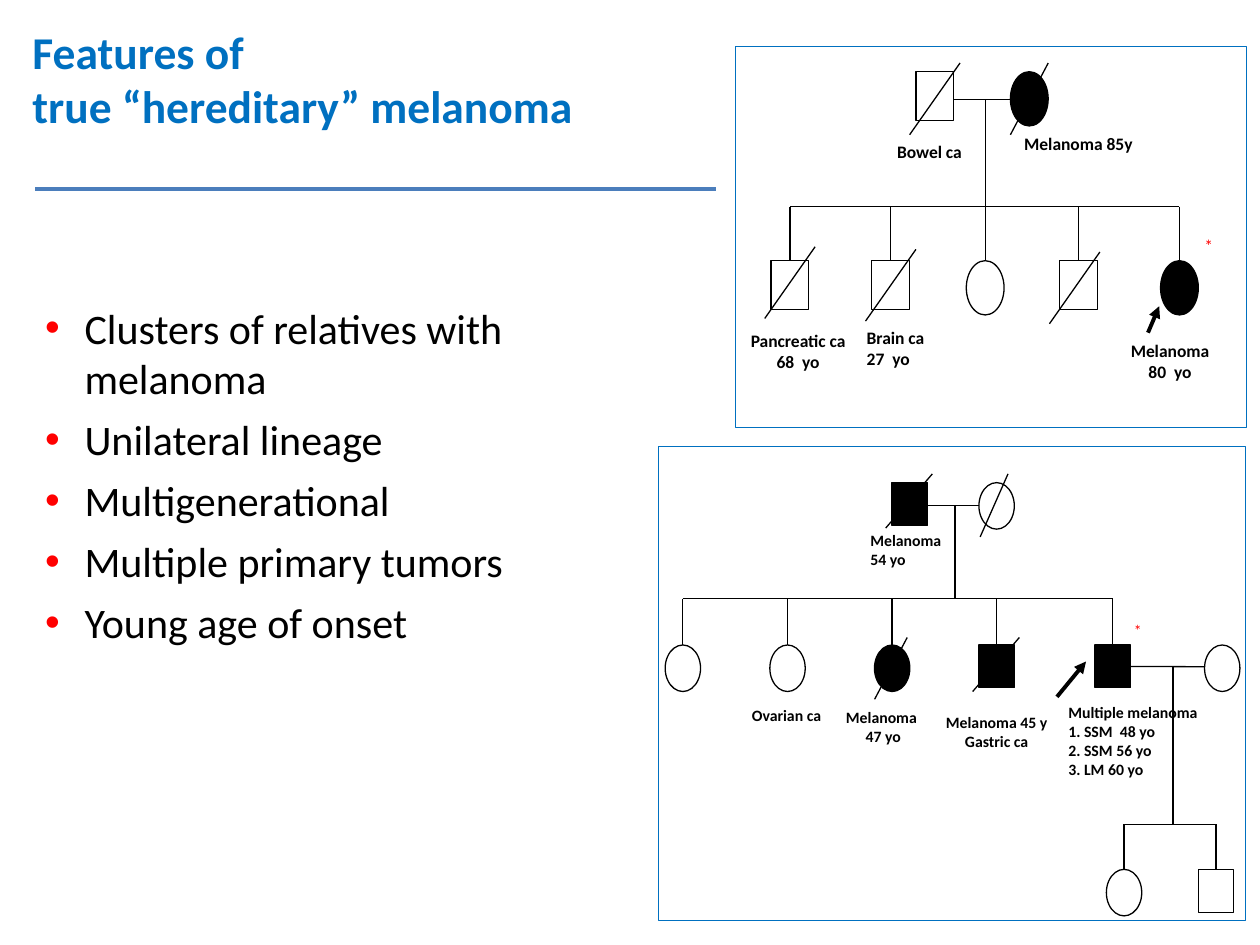
from collections import namedtuple

from lxml.etree import SubElement
from pptx import Presentation
from pptx.dml.color import RGBColor
from pptx.enum.shapes import MSO_CONNECTOR, MSO_SHAPE
from pptx.enum.text import MSO_AUTO_SIZE, PP_ALIGN
from pptx.oxml.ns import qn
from pptx.util import Pt

BLUE, RULE, RED, BLACK, WHITE = "0070C0", "4B7EBC", "FF0000", "000000", "FFFFFF"
LEFT, CENTER, JUSTIFY = PP_ALIGN.LEFT, PP_ALIGN.CENTER, PP_ALIGN.JUSTIFY
MAN, WOMAN = MSO_SHAPE.RECTANGLE, MSO_SHAPE.OVAL

# x is the symbol's centre; slash is (x, y, x, y) measured from its top centre
Person = namedtuple("Person", "sex x ill slash", defaults=(False, None))
# symbol width and the heights of squares and circles
Size = namedtuple("Size", "width man woman")


def color(value):
    return RGBColor.from_string(value)


def add_text(page, left, top, width, height, lines, size=10, ink=BLACK, bold=False,
             align=LEFT, wrap=True, bullet=None, after=None):
    box = page.shapes.add_textbox(Pt(left), Pt(top), Pt(width), Pt(height))
    frame = box.text_frame
    frame.word_wrap = wrap
    frame.auto_size = MSO_AUTO_SIZE.SHAPE_TO_FIT_TEXT
    for index, line in enumerate(lines):
        para = frame.add_paragraph() if index else frame.paragraphs[0]
        para.alignment = align
        if after is not None:
            para.space_after = Pt(after)
        if bullet:
            add_bullet(para, bullet)
        span = para.add_run()
        span.text = line
        span.font.name = "Calibri"
        span.font.size = Pt(size)
        span.font.bold = bold
        span.font.color.rgb = color(ink)
    return box


def add_bullet(para, ink, indent=22.5):
    props = para._p.get_or_add_pPr()
    props.set("marL", str(Pt(indent)))
    props.set("indent", str(-Pt(indent)))
    SubElement(SubElement(props, qn("a:buClr")), qn("a:srgbClr"), val=ink)
    SubElement(props, qn("a:buFont"), typeface="Arial")
    SubElement(props, qn("a:buChar"), char="•")


def add_line(page, x1, y1, x2, y2, ink=BLACK, weight=0.75, arrow=False, begin=None, end=None):
    line = page.shapes.add_connector(MSO_CONNECTOR.STRAIGHT, Pt(x1), Pt(y1), Pt(x2), Pt(y2))
    line.line.color.rgb = color(ink)
    line.line.width = Pt(weight)
    if arrow:
        SubElement(line.line._get_or_add_ln(), qn("a:tailEnd"), type="triangle")
    SubElement(line._element.spPr, qn("a:effectLst"))
    if begin:
        line.begin_connect(*begin)
    if end:
        line.end_connect(*end)


def add_outline(page, kind, left, top, width, height, fill=WHITE, ink=BLACK, weight=0.75):
    shape = page.shapes.add_shape(kind, Pt(left), Pt(top), Pt(width), Pt(height))
    shape.shadow.inherit = False
    shape.fill.solid()
    shape.fill.fore_color.rgb = color(fill)
    shape.line.color.rgb = color(ink)
    shape.line.width = Pt(weight)
    return shape


def add_person(page, person, left, top, size):
    x = left + person.x
    height = size.man if person.sex == MAN else size.woman
    symbol = add_outline(page, person.sex, x - size.width / 2, top, size.width, height,
                         fill=BLACK if person.ill else WHITE)
    if person.slash:
        x1, y1, x2, y2 = person.slash
        add_line(page, x + x1, top + y1, x + x2, top + y2)
    return symbol


def add_couple_lines(page, x1, x2, y, drop_x, drop_y, begin=None):
    add_line(page, x1, y, x2, y, begin=begin)
    add_line(page, drop_x, y, drop_x, drop_y)


def add_siblings(page, people, left, bar_y, top, size):
    """Draw the sibship bar, the symbols and their drops; return the symbols."""
    add_line(page, left + people[0].x, bar_y, left + people[-1].x, bar_y)
    symbols = []
    for person in people:
        symbol = add_person(page, person, left, top, size)
        x = left + person.x
        add_line(page, x, bar_y, x, top, end=(symbol, 0))
        symbols.append(symbol)
    return symbols


def add_labels(page, labels, left, top, size):
    for x, y, width, height, align, wrap, lines in labels:
        add_text(page, left + x, top + y, width, height, lines, size=size, bold=True,
                 align=align, wrap=wrap)


def late_onset_family(page, left, top, width, height):
    add_outline(page, MSO_SHAPE.RECTANGLE, left, top, width, height, ink=BLUE, weight=0.25)
    size = Size(21.6, 28, 31)

    # Parents
    father = Person(MAN, 114.2, slash=(14.4, -5, -14.4, 36))
    mother = Person(WOMAN, 168.2, True, (10.8, -5, -10.8, 36))
    for parent in (father, mother):
        add_person(page, parent, left, top + 14.5, size)
    half = size.width / 2
    add_couple_lines(page, left + father.x + half, left + mother.x - half, top + 30.4,
                     left + 143, top + 91.6)

    # Children
    children = [
        Person(MAN, 31.4, slash=(14.4, -8, -14.4, 33)),
        Person(MAN, 89, slash=(14.4, -6.5, -14.4, 34.5)),
        Person(WOMAN, 143),
        Person(MAN, 196.3, slash=(12.2, -5, -16.6, 36)),
        Person(WOMAN, 254, True),
    ]
    add_siblings(page, children, left, top + 91.6, top + 122.5, size)

    # Index case and labels
    add_line(page, left + 236, top + 163.6, left + 242.4, top + 148.5, weight=2.25, arrow=True)
    add_text(page, left + 261.1, top + 104.5, 20.9, 19.4, ["*"], ink=RED)
    add_labels(page, [
        (85.5, 50.5, 51.8, 19.4, JUSTIFY, False, ["Bowel ca"]),
        (158.2, 46.2, 77, 19.4, JUSTIFY, False, ["Melanoma 85y"]),
        (-6, 158.5, 84.2, 31.7, CENTER, True, ["Pancreatic ca", "68  yo"]),
        (68.2, 157.1, 48.2, 31.7, JUSTIFY, False, ["Brain ca", "27  yo"]),
        (205.7, 164.3, 85.7, 31.7, CENTER, True, ["Melanoma", "80  yo"]),
    ], left, top, 10)


def early_onset_family(page, left, top, width, height):
    add_outline(page, MSO_SHAPE.RECTANGLE, left, top, width, height, ink=BLUE, weight=0.25)
    size = Size(20.2, 24.5, 26.6)
    half = size.width / 2

    # Grandparents
    father = Person(MAN, 143.8, True, (13, -5, -13.7, 26))
    mother = Person(WOMAN, 193.5, slash=(6.5, -5, -9.4, 31))
    for parent in (father, mother):
        add_person(page, parent, left, top + 20.8, size)
    add_couple_lines(page, left + father.x + half, left + mother.x - half, top + 33.7,
                     left + 169.8, top + 87)

    # Children and the wife of the index case
    children = [
        Person(WOMAN, 14.2),
        Person(WOMAN, 74),
        Person(WOMAN, 133.8, True, (8.6, -4.3, -10, 31)),
        Person(MAN, 193.5, True, (13, -4.3, -13.7, 26.6)),
        Person(MAN, 259.8, True),
    ]
    symbols = add_siblings(page, children, left, top + 87, top + 113.6, size)
    wife = Person(WOMAN, 322.4)
    add_person(page, wife, left, top + 113.6, size)
    add_couple_lines(page, left + children[-1].x + half, left + wife.x - half, top + 126,
                     left + 294.3, top + 216, begin=(symbols[-1], 3))

    # Grandchildren
    grandchildren = [Person(WOMAN, 266.3), Person(MAN, 318.8)]
    add_siblings(page, grandchildren, left, top + 216, top + 241.8, size)

    # Index case and labels
    add_line(page, left + 228, top + 143.2, left + 244.6, top + 123, weight=2.25, arrow=True)
    add_text(page, left + 264.8, top + 96.4, 21.6, 18, ["*"], size=9, ink=RED)
    add_labels(page, [
        (114.3, 44.5, 55.4, 28.8, JUSTIFY, False, ["Melanoma", "54 yo"]),
        (46.6, 144.6, 54.7, 18, JUSTIFY, False, ["Ovarian ca"]),
        (99.9, 146, 57.6, 28.8, CENTER, False, ["Melanoma ", "47 yo"]),
        (156.8, 148.9, 73.4, 28.8, CENTER, False, ["Melanoma 45 y", "Gastric ca"]),
        (227.4, 143.2, 89.3, 51.1, JUSTIFY, False,
         ["Multiple melanoma", "1. SSM  48 yo", "2. SSM 56 yo", "3. LM 60 yo"]),
    ], left, top, 9)


def heading(page, left, top, width, height):
    add_text(page, left, top, width, height, ["Features of", "true “hereditary” melanoma"],
             size=26, ink=BLUE, bold=True)
    add_line(page, left + 8.6, top + 98, left + 397.4, top + 98, ink=RULE, weight=2.25)


def features(page, left, top, width, height):
    add_text(page, left, top, width, height, [
        "Clusters of relatives with melanoma", "Unilateral lineage", "Multigenerational",
        "Multiple primary tumors", "Young age of onset",
    ], size=24, bullet=RED, after=6)


def main():
    deck = Presentation()
    deck.slide_width, deck.slide_height = Pt(720), Pt(540)
    page = deck.slides.add_slide(deck.slide_layouts[6])
    heading(page, 11.5, 10, 448, 70.6)
    late_onset_family(page, 420, 26.5, 292, 217.5)
    early_onset_family(page, 376, 255, 335.5, 270.7)
    features(page, 18.7, 169.2, 337, 206)
    deck.save("out.pptx")


if __name__ == "__main__":
    main()
